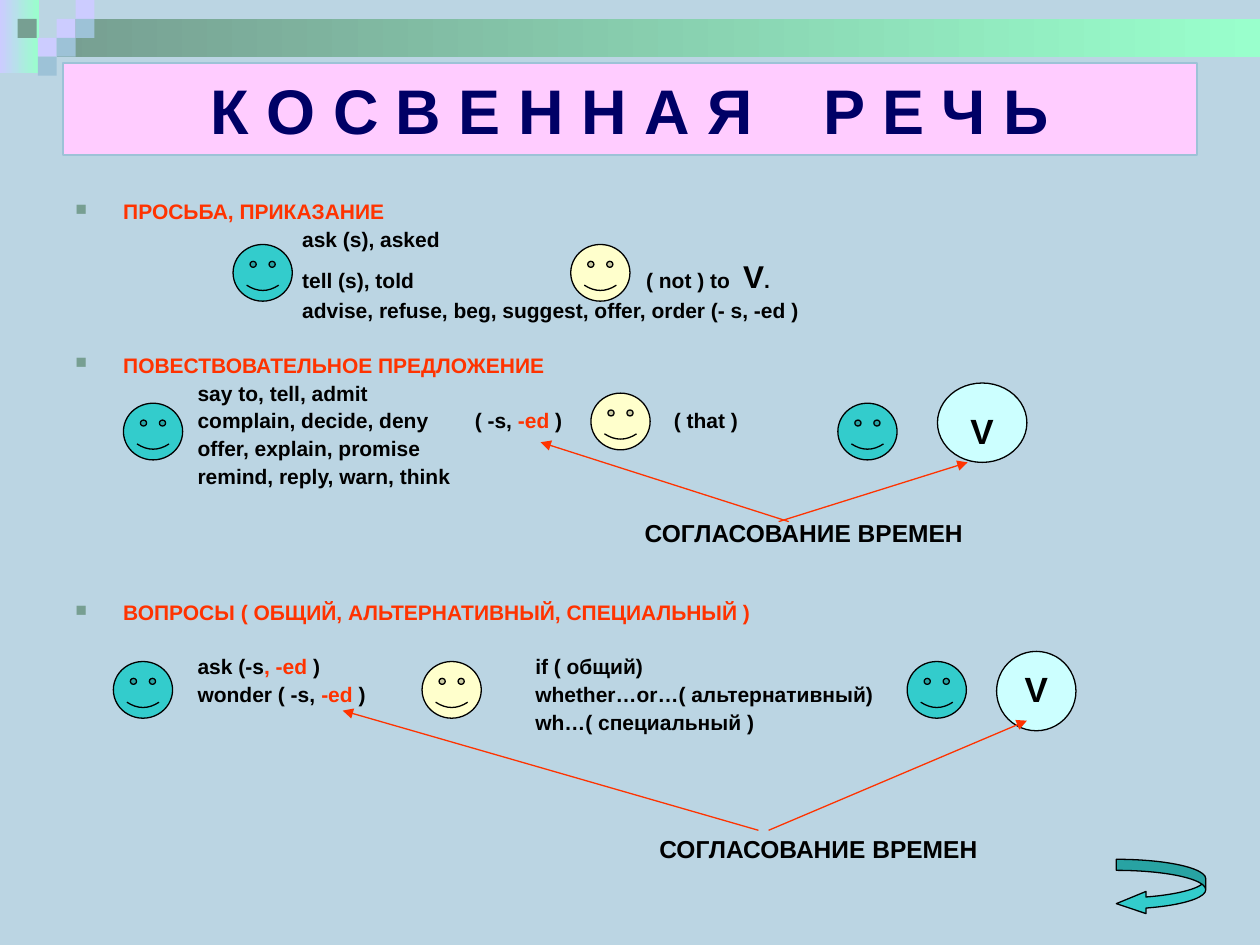
import pptx
import pptx.util
import pptx.dml.color
import pptx.enum.shapes
import pptx.enum.text
import pptx.oxml.xmlchemy

Inches, Pt = pptx.util.Inches, pptx.util.Pt
Shape = pptx.enum.shapes.MSO_SHAPE
Align = pptx.enum.text.PP_ALIGN
Anchor = pptx.enum.text.MSO_ANCHOR

THEME = {
    "font": "Arial", "back": "BBD5E3", "lilac": "CCCCFF", "mint": "99FFCC",
    "sage": "779F92", "sky": "9DC2D7", "pink": "FFCCFF", "navy": "000066",
    "red": "FF3300", "black": "000000", "teal": "33CCCC", "cream": "FFFFCC",
    "ice": "CCFFFF", "title": 36, "text": 12, "big": 18, "verb": 20,
    "label": 14, "line": 0.75,
}

TITLE = ("К О С В Е Н Н А Я", "Р Е Ч Ь")
WORD_GAP = 30  # extra points between the title words

# Tab stops of the text rows, in inches from the left text edge
ORDER, SAY, ASK = (1.8, 4.53, 5.3), (0.97, 3.17, 4.75), (0.97, 3.65)
ROW_GAP = 3
# Tab stops (None for a bulleted heading), space before, text;
# *red* and ^big^ parts are marked
ROWS = [
    (None, 0, "ПРОСЬБА, ПРИКАЗАНИЕ"),
    (ORDER, ROW_GAP, "\task (s), asked"),
    (ORDER, 5, "\ttell (s), told\t( not ) to\t^V^."),
    (ORDER, ROW_GAP, "\tadvise, refuse, beg, suggest, offer, order (- s, -ed )"),
    (None, 18.4, "ПОВЕСТВОВАТЕЛЬНОЕ ПРЕДЛОЖЕНИЕ"),
    (SAY, ROW_GAP, "\tsay to, tell, admit"),
    (SAY, ROW_GAP, "\tcomplain, decide, deny\t( -s, *-ed* )\t( that )"),
    (SAY, ROW_GAP, "\toffer, explain, promise"),
    (SAY, ROW_GAP, "\tremind, reply, warn, think"),
    (None, 64.7, "ВОПРОСЫ ( ОБЩИЙ, АЛЬТЕРНАТИВНЫЙ, СПЕЦИАЛЬНЫЙ )"),
    (ASK, 18, "\task (-s*, -ed* )\tif ( общий)"),
    (ASK, ROW_GAP, "\twonder ( -s, *-ed* )\twhether…or…( альтернативный)"),
    (ASK[1:], ROW_GAP, "\twh…( специальный )"),
]

TILE = 0.15
TILES = [(0.45, 0.15, "lilac"), (0.6, 0, "lilac"), (0.6, 0.15, "sky"),
         (0.3, 0.3, "lilac"), (0.14, 0.15, "sage"), (0.45, 0.3, "sky"),
         (0.3, 0.45, "sky")]
BANDS = [((0, 0, 0.31, 0.58), "lilac"), ((0.45, 0.15, 9.55, 0.3), "sage")]

FACES = [(1.85, 1.94, "teal"), (4.53, 1.94, "cream"),
         (0.98, 3.2, "teal"), (6.65, 3.2, "teal"), (4.69, 3.12, "cream"),
         (0.9, 5.25, "teal"), (7.2, 5.25, "teal"), (3.35, 5.25, "cream")]
VERBS = [((7.44, 3.04, 0.71, 0.63), (7.6, 3.2, 0.39, 0.43)),
         ((7.91, 5.17, 0.63, 0.63), (7.99, 5.25, 0.47, 0.43))]
TENSE = "СОГЛАСОВАНИЕ ВРЕМЕН"
TENSES = [(4.53, 4.06, 3.7, 0.33), (4.84, 6.57, 3.31, 0.33)]
ARROWS = [((6.18, 4.14), (7.68, 3.67)), ((6.26, 4.14), (4.29, 3.51)),
          ((6.1, 6.59), (8.15, 5.72)), ((6.02, 6.59), (2.72, 5.64))]


def color(name):
    return pptx.dml.color.RGBColor.from_string(THEME[name])


def add_tag(parent, tag, **attrs):
    node = pptx.oxml.xmlchemy.OxmlElement(tag)
    for key, value in attrs.items():
        node.set(key, str(value))
    parent.append(node)
    return node


def add_shape(slide, kind, box, fill, line=None):
    shape = slide.shapes.add_shape(kind, *map(Inches, box))
    shape.shadow.inherit = False
    shape.fill.solid()
    shape.fill.fore_color.rgb = color(fill)
    if line:
        shape.line.color.rgb = color(line)
        shape.line.width = Pt(THEME["line"])
    else:
        shape.line.fill.background()
    return shape


def set_font(para, size, tint):
    font = para.font
    font.name, font.size, font.bold = THEME["font"], Pt(THEME[size]), True
    font.color.rgb = color(tint)


def add_box(slide, box):
    frame = slide.shapes.add_textbox(*map(Inches, box)).text_frame
    frame.word_wrap = True
    return frame


def add_label(slide, box, text, size):
    para = add_box(slide, box).paragraphs[0]
    para.text = text
    para.alignment = Align.CENTER
    set_font(para, size, "black")


def add_arrow(slide, start, end):
    line = slide.shapes.add_connector(
        pptx.enum.shapes.MSO_CONNECTOR.STRAIGHT, *map(Inches, start + end))
    line.line.color.rgb = color("red")
    line.line.width = Pt(THEME["line"])
    add_tag(line.line._get_or_add_ln(), "a:tailEnd", type="triangle")
    add_tag(line._element.spPr, "a:effectLst")


def add_decor(slide):
    for box, tint in BANDS:
        fill = add_shape(slide, Shape.RECTANGLE, box, tint).fill
        fill.gradient()
        fill.gradient_angle = 0
        for stop, name in zip(fill.gradient_stops, (tint, "mint")):
            stop.color.rgb = color(name)
    for left, top, tint in TILES:
        add_shape(slide, Shape.RECTANGLE, (left, top, TILE, TILE), tint)


def add_title(slide):
    shape = add_shape(slide, Shape.RECTANGLE, (0.5, 0.5, 9, 0.73), "pink", "sky")
    shape.text_frame.vertical_anchor = Anchor.MIDDLE
    para = shape.text_frame.paragraphs[0]
    para.alignment = Align.CENTER
    set_font(para, "title", "navy")
    for text in (TITLE[0], " ", TITLE[1]):
        run = para.add_run()
        run.text = text
        if text == " ":
            run._r.get_or_add_rPr().set("spc", str(WORD_GAP * 100))


def add_runs(para, text):
    """Split the text at * and ^ marks and style the marked parts."""
    for i, part in enumerate(text.replace("^", "*^").split("*")):
        if part in ("", "^"):
            continue
        run = para.add_run()
        run.text = part.lstrip("^")
        if "^" in text:
            if part == "^V":
                run.font.size = Pt(THEME["big"])
        elif i % 2:
            run.font.color.rgb = color("red")


def add_body(slide):
    frame = add_box(slide, (0.5, 1.55, 9, 5.51))
    for i, (tabs, gap, text) in enumerate(ROWS):
        para = frame.add_paragraph() if i else frame.paragraphs[0]
        para.line_spacing = 0.9
        para.space_before = Pt(gap)
        props = para._p.get_or_add_pPr()
        if tabs:
            stops = add_tag(props, "a:tabLst")
            for pos in tabs:
                add_tag(stops, "a:tab", pos=Inches(pos), algn="l")
        else:
            indent = Inches(0.38)
            props.set("marL", str(indent))
            props.set("indent", str(-indent))
            add_tag(add_tag(props, "a:buClr"), "a:srgbClr", val=THEME["sage"])
            add_tag(props, "a:buSzPct", val=75000)
            add_tag(props, "a:buChar", char="■")
        set_font(para, "text", "black" if tabs else "red")
        add_runs(para, text)


def main():
    deck = pptx.Presentation()
    deck.slide_width, deck.slide_height = Inches(10), Inches(7.5)
    slide = deck.slides.add_slide(deck.slide_layouts[6])
    slide.background.fill.solid()
    slide.background.fill.fore_color.rgb = color("back")
    add_decor(slide)
    add_title(slide)
    add_body(slide)
    for left, top, tint in FACES:
        add_shape(slide, Shape.SMILEY_FACE, (left, top, 0.47, 0.45), tint, "black")
    for oval, box in VERBS:
        add_shape(slide, Shape.OVAL, oval, "ice", "black")
        add_label(slide, box, "V", "verb")
    for box in TENSES:
        add_label(slide, box, TENSE, "label")
    for start, end in ARROWS:
        add_arrow(slide, start, end)
    back = add_shape(slide, Shape.CURVED_LEFT_ARROW, (8.86, 6.82, 0.71, 0.44),
                     "teal", "black")
    for i, value in enumerate((0.2, 0.4, 0.535)):
        back.adjustments[i] = value
    deck.save("out.pptx")


if __name__ == "__main__":
    main()
